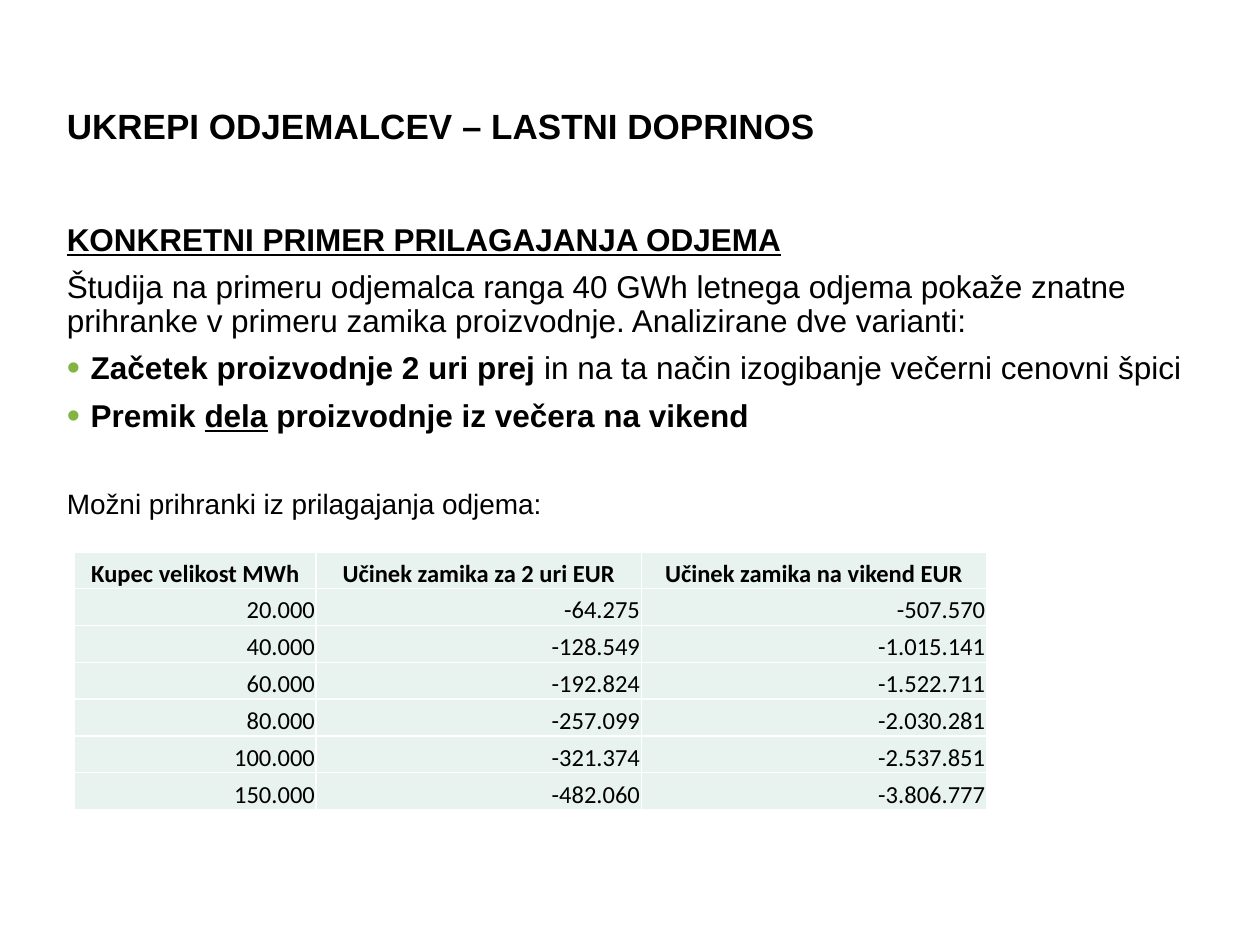
from lxml.etree import SubElement
from pptx import Presentation
from pptx.dml.color import RGBColor
from pptx.enum.text import MSO_ANCHOR, MSO_AUTO_SIZE, PP_ALIGN
from pptx.oxml import parse_xml
from pptx.oxml.ns import nsdecls, qn
from pptx.util import Inches, Pt

BLACK = RGBColor(0x00, 0x00, 0x00)
WHITE = RGBColor(0xFF, 0xFF, 0xFF)
GREEN = RGBColor(0x83, 0xB3, 0x41)
MINT = RGBColor(0xE8, 0xF2, 0xEE)

TITLE = "UKREPI ODJEMALCEV – LASTNI DOPRINOS"
HEADING = "KONKRETNI PRIMER PRILAGAJANJA ODJEMA"
STUDY = ("Študija na primeru odjemalca ranga 40 GWh letnega odjema pokaže znatne "
         "prihranke v primeru zamika proizvodnje. Analizirane dve varianti:")
EARLIER_START = [("Začetek proizvodnje 2 uri prej ", {"bold": True}),
                 ("in na ta način izogibanje večerni cenovni špici", {})]
WEEKEND_SHIFT = [("Premik ", {}), ("dela", {"underline": True}),
                 (" proizvodnje iz večera na vikend", {})]
SAVINGS_INTRO = "Možni prihranki iz prilagajanja odjema:"
SAVINGS = [
    ("Kupec velikost MWh", "Učinek zamika za 2 uri EUR", "Učinek zamika na vikend EUR"),
    ("20.000", "-64.275", "-507.570"),
    ("40.000", "-128.549", "-1.015.141"),
    ("60.000", "-192.824", "-1.522.711"),
    ("80.000", "-257.099", "-2.030.281"),
    ("100.000", "-321.374", "-2.537.851"),
    ("150.000", "-482.060", "-3.806.777"),
]


class SlideBuilder:
    text_font, table_font = "Arial", "Calibri"
    line_spacing, paragraph_gap = 0.9, 7.5
    bullet_indent = Inches(0.19)

    def __init__(self, deck):
        self.width, self.height = deck.slide_width, deck.slide_height
        self.slide = deck.slides.add_slide(deck.slide_layouts[1])

    def place(self, placeholder, left, top, width, height):
        """Position a placeholder by percentages of the slide's size."""
        placeholder.left = int(self.width * left / 100)
        placeholder.top = int(self.height * top / 100)
        placeholder.width = int(self.width * width / 100)
        placeholder.height = int(self.height * height / 100)
        frame = placeholder.text_frame
        frame.word_wrap = True
        frame.auto_size = MSO_AUTO_SIZE.NONE
        return frame

    def style(self, paragraph, size, bold=False, underline=None, name=text_font):
        font = paragraph.font
        font.name, font.size, font.bold, font.underline = name, Pt(size), bold, underline
        font.color.rgb = BLACK

    def title(self, text, *area):
        frame = self.place(self.slide.shapes.title, *area)
        frame.vertical_anchor = MSO_ANCHOR.MIDDLE
        frame.text = text
        heading = frame.paragraphs[0]
        heading.alignment = PP_ALIGN.LEFT
        heading.line_spacing = self.line_spacing
        self.style(heading, 20, bold=True)

    def body(self, *area):
        self.body_frame = self.place(self.slide.placeholders[1], *area)

    def paragraph(self, runs, size=18, bullet=False, gap=paragraph_gap,
                  align=PP_ALIGN.LEFT, **look):
        frame = self.body_frame
        first = not frame.text
        line = frame.paragraphs[0] if first else frame.add_paragraph()
        line.alignment = align
        line.line_spacing = self.line_spacing
        line.space_before = Pt(0 if first else gap)
        self.bullet(line, bullet)
        self.style(line, size, **look)
        for text, emphasis in [(runs, {})] if isinstance(runs, str) else runs:
            run = line.add_run()
            run.text = text
            for attribute, value in emphasis.items():
                setattr(run.font, attribute, value)

    def bullet(self, line, shown):
        properties = line._p.get_or_add_pPr()
        indent = self.bullet_indent if shown else 0
        properties.set("marL", str(indent))
        properties.set("indent", str(-indent))
        if not shown:
            SubElement(properties, qn("a:buNone"))
            return
        color = SubElement(properties, qn("a:buClr"))
        SubElement(color, qn("a:srgbClr"), val=str(GREEN))
        SubElement(properties, qn("a:buSzPct"), val="120000")
        SubElement(properties, qn("a:buFont"), typeface=self.text_font)
        SubElement(properties, qn("a:buChar"), char="•")

    def table(self, rows, left, top, column_widths, row_height):
        """Add a table; all lengths are percentages of the slide's size."""
        table = self.slide.shapes.add_table(
            len(rows), len(column_widths),
            int(self.width * left / 100), int(self.height * top / 100),
            int(self.width * sum(column_widths) / 100),
            int(self.height * row_height * len(rows) / 100)).table
        for column, share in zip(table.columns, column_widths):
            column.width = int(self.width * share / 100)
        for r, row in enumerate(rows):
            for c, text in enumerate(row):
                self.cell(table.cell(r, c), text, header=r == 0)

    def cell(self, cell, text, header):
        cell.text = text
        cell.vertical_anchor = MSO_ANCHOR.BOTTOM
        cell.margin_left = cell.margin_right = cell.margin_top = Inches(0.01)
        cell.margin_bottom = 0
        cell.fill.solid()
        cell.fill.fore_color.rgb = MINT
        entry = cell.text_frame.paragraphs[0]
        entry.alignment = PP_ALIGN.CENTER if header else PP_ALIGN.RIGHT
        self.style(entry, 14, bold=header, name=self.table_font)
        properties = cell._tc.get_or_add_tcPr()
        for position, side in enumerate("LRTB"):
            properties.insert(position, parse_xml(
                f'<a:ln{side} {nsdecls("a")} w="{Pt(1)}"><a:solidFill>'
                f'<a:srgbClr val="{WHITE}"/></a:solidFill></a:ln{side}>'))


def main():
    deck = Presentation()
    deck.slide_width, deck.slide_height = Inches(10), Inches(7.5)
    builder = SlideBuilder(deck)

    # Title
    builder.title(TITLE, 4.3, 3.87, 73, 19.33)

    # Example and its two variants
    builder.body(4.3, 23.07, 91.1, 66.93)
    builder.paragraph(HEADING, bold=True, underline=True, align=PP_ALIGN.JUSTIFY)
    builder.paragraph(STUDY)
    builder.paragraph(EARLIER_START, bullet=True)
    builder.paragraph(WEEKEND_SHIFT, bullet=True, bold=True)
    builder.paragraph(SAVINGS_INTRO, size=16, gap=32)

    # Savings by customer size
    builder.table(SAVINGS, 5.9, 58.4, (19.2, 25.8, 27.4), 3.9)

    deck.save("out.pptx")


if __name__ == "__main__":
    main()
